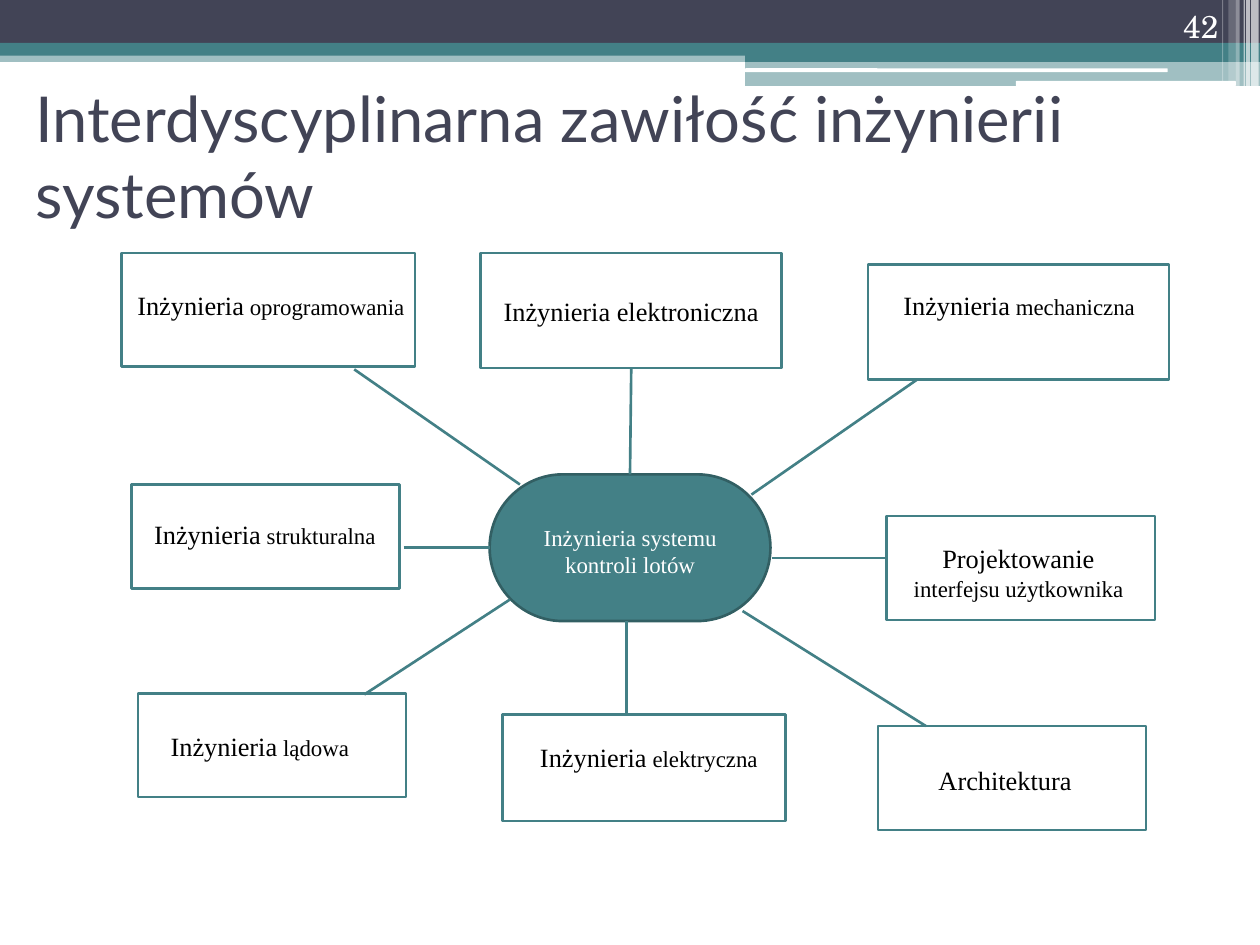
from lxml import etree
from pptx import Presentation
from pptx.dml.color import RGBColor
from pptx.enum import shapes, text
from pptx.oxml.ns import qn
from pptx.util import Inches, Pt

COLORS = {"teal": "438086", "teal_dark": "325F63", "navy": "424456",
          "white": "FFFFFF", "black": "000000"}
BODY, HEADING, NUMBER = "Times New Roman", "Lato", "TeX Gyre Schola"
LARGE, SMALL = 15, 13
LINE_WIDTH = 1.5

TITLE = "Interdyscyplinarna zawiłość inżynierii systemów"
PAGE = "42"

# left, top, width, height, colour, opacity in percent
BANDS = [
    (0, 0.4, 9.96, 0.09, "teal", 50),
    (0, 0, 9.96, 0.34, "navy", 100),
    (0, 0.34, 9.96, 0.1, "teal", 100),
    (5.89, 0.39, 4.07, 0.1, "teal", 100),
    (5.89, 0.48, 4.07, 0.2, "teal", 50),
]
ROUNDED_BARS = [(5.89, 0.54, 3.34, 0.03), (8.03, 0.64, 1.74, 0.04)]
# left, width, height, opacity in percent
STRIPES = [(9.89, 0.06, 0.68, 65), (9.85, 0.03, 0.68, 65), (9.83, 0.01, 0.68, 60),
           (9.77, 0.03, 0.68, 40), (9.71, 0.06, 0.64, 20), (9.66, 0.01, 0.64, 30)]

HUB = (3.87, 3.75, 2.22, 1.16)
HUB_LABEL = ((4.17, 4.09, 1.62, 0.53), "Inżynieria systemu kontroli lotów")

# box, label area (None: the box itself), alignment, wrap, large text, small text
DISCIPLINES = {
    "electronic": ((3.8, 2, 2.38, 0.91), None, "CENTER", True,
                   "Inżynieria elektroniczna", ""),
    "electrical": ((3.97, 5.65, 2.24, 0.84), (4.17, 5.81, 1.92, 0.35), "LEFT", False,
                   "Inżynieria", " elektryczna"),
    "civil": ((1.09, 5.48, 2.12, 0.82), (1.25, 5.72, 1.61, 0.35), "LEFT", False,
              "Inżynieria", " lądowa"),
    "structural": ((1.04, 3.83, 2.12, 0.82), (1.12, 4.05, 1.95, 0.35), "LEFT", False,
                   "Inżynieria", " strukturalna"),
    "software": ((0.96, 2, 2.32, 0.9), (0.33, 2.24, 3.62, 0.35), "CENTER", True,
                 "Inżynieria", " oprogramowania"),
    "mechanical": ((6.86, 2.09, 2.38, 0.91), (6.55, 2.24, 3.01, 0.35), "CENTER", True,
                   "Inżynieria", " mechaniczna"),
    "interface": ((7.01, 4.08, 2.12, 0.82), (7.09, 4.24, 1.92, 0.57), "CENTER", True,
                  "Projektowanie", " interfejsu użytkownika"),
    "architecture": ((6.94, 5.74, 2.12, 0.82), (7.32, 5.99, 1.45, 0.35), "LEFT", True,
                     "Architektura", ""),
}

# start, end, side of the hub where the line ends at its middle
SPOKES = {
    "electronic": ((4.99, 2.91), (4.98, 3.75), 0),
    "electrical": ((4.95, 5.66), (4.95, 4.91), None),
    "structural": ((3.19, 4.33), (3.87, 4.33), 1),
    "interface": ((7.01, 4.41), (6.1, 4.41), None),
    "software": ((2.8, 2.92), (4.11, 3.83), None),
    "civil": ((2.88, 5.49), (4.03, 4.74), None),
    "mechanical": ((7.25, 3), (5.94, 3.91), None),
    "architecture": ((7.32, 5.74), (5.87, 4.83), None),
}


def rgb(name):
    return RGBColor.from_string(COLORS[name])


def inches(area):
    return [Inches(length) for length in area]


def add_block(slide, area, fill, line=None, opacity=100, rounding=None):
    """Add a filled rectangle, rounded when rounding is given."""
    kind = shapes.MSO_SHAPE.RECTANGLE if rounding is None else shapes.MSO_SHAPE.ROUNDED_RECTANGLE
    block = slide.shapes.add_shape(kind, *inches(area))
    block.shadow.inherit = False
    if rounding is not None:
        block.adjustments[0] = rounding
    block.fill.solid()
    block.fill.fore_color.rgb = rgb(fill)
    if opacity < 100:
        color = block.fill._xPr.find(qn("a:solidFill"))[0]
        etree.SubElement(color, qn("a:alpha")).set("val", str(opacity * 1000))
    if line:
        block.line.color.rgb = rgb(line)
        block.line.width = Pt(LINE_WIDTH)
    else:
        block.line.fill.background()
    return block


def write(frame, runs, font, color, align="LEFT", anchor="TOP", wrap=True):
    """Fill a text frame with (words, size) runs."""
    frame.word_wrap = wrap
    frame.auto_size = text.MSO_AUTO_SIZE.NONE
    frame.vertical_anchor = getattr(text.MSO_ANCHOR, anchor)
    paragraph = frame.paragraphs[0]
    paragraph.alignment = getattr(text.PP_ALIGN, align)
    for words, size in runs:
        run = paragraph.add_run()
        run.text = words
        run.font.name = font
        run.font.size = Pt(size)
        run.font.color.rgb = rgb(color)


def add_label(slide, area, runs, font, color, **layout):
    label = slide.shapes.add_textbox(*inches(area))
    write(label.text_frame, runs, font, color, **layout)


def add_header(slide):
    for *area, color, opacity in BANDS:
        add_block(slide, area, color, opacity=opacity)
    for bar in ROUNDED_BARS:
        add_block(slide, bar, "white", rounding=0.167)
    for left, width, height, opacity in STRIPES:
        add_block(slide, (left, 0, width, height), "white", opacity=opacity)
    add_label(slide, (8.9, 0, 0.83, 0.4), [(PAGE, 18)], NUMBER, "white",
              align="RIGHT", anchor="BOTTOM")

    title = slide.shapes.title
    title.left, title.top, title.width, title.height = inches((0.18, 0.66, 8.78, 1.13))
    write(title.text_frame, [(TITLE, 36)], HEADING, "navy", anchor="MIDDLE")


def add_disciplines(slide):
    boxes = {}
    for name, (area, label_area, align, wrap, large, small) in DISCIPLINES.items():
        box = boxes[name] = add_block(slide, area, "white", line="teal")
        runs = [(words, size) for words, size in ((large, LARGE), (small, SMALL)) if words]
        if label_area:
            add_label(slide, label_area, runs, BODY, "black", align=align, wrap=wrap)
        else:
            write(box.text_frame, runs, BODY, "black", align=align, anchor="MIDDLE")
    return boxes


def add_hub(slide):
    hub = add_block(slide, HUB, "teal", line="teal_dark", rounding=0.5)
    area, words = HUB_LABEL
    add_label(slide, area, [(words, SMALL)], BODY, "white", align="CENTER")
    return hub


def add_spokes(slide, boxes, hub):
    for name, (start, end, hub_side) in SPOKES.items():
        spoke = slide.shapes.add_connector(shapes.MSO_CONNECTOR.STRAIGHT, *inches(start + end))
        spoke.line.color.rgb = rgb("teal")
        spoke.line.width = Pt(LINE_WIDTH)
        etree.SubElement(spoke._element.spPr, qn("a:effectLst"))
        if name == "electronic":
            spoke.begin_connect(boxes[name], 2)
        if hub_side is not None:
            spoke.end_connect(hub, hub_side)


def main():
    deck = Presentation()
    deck.slide_width, deck.slide_height = Inches(9.96), Inches(7.47)
    slide = deck.slides.add_slide(deck.slide_layouts.get_by_name("Title Only"))
    add_header(slide)
    boxes = add_disciplines(slide)
    hub = add_hub(slide)
    add_spokes(slide, boxes, hub)
    deck.save("out.pptx")


if __name__ == "__main__":
    main()
